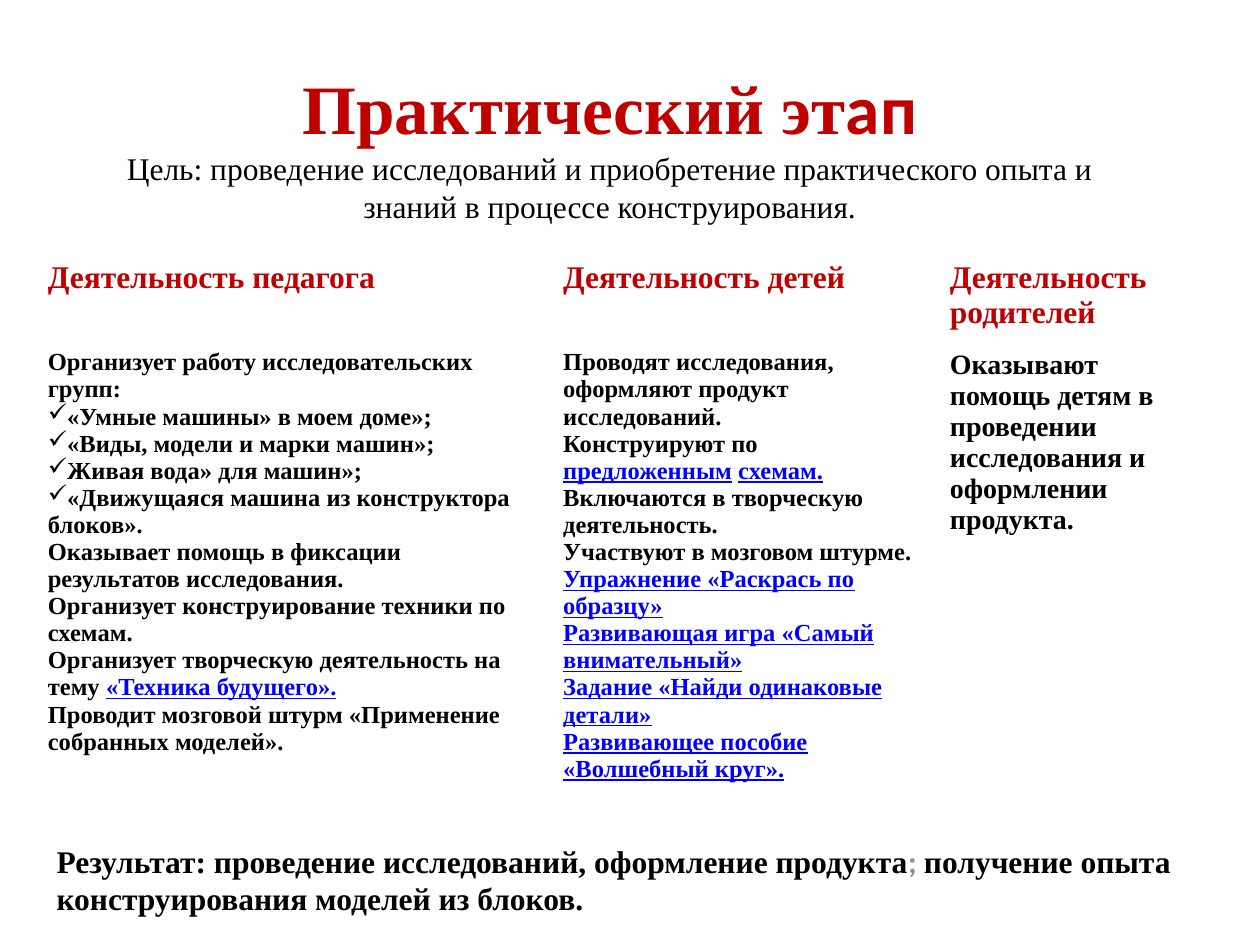
import dataclasses

import lxml.etree
import pptx
import pptx.dml.color
import pptx.enum.text
import pptx.oxml.ns
import pptx.util


@dataclasses.dataclass(frozen=True)
class Theme:
    serif: str = "Times New Roman"
    sans: str = "Calibri"
    accent: str = "C00000"
    ink: str = "000000"
    link: str = "0000FF"
    muted: str = "8C8C8C"
    border: str = "FFFFFF"
    title: float = 39.6
    lead: float = 18
    parents: float = 16
    body: float = 14


THEME = Theme()
WIDTH, HEIGHT = 10, 7.5
CHECK = "✓"
COLUMNS = (4.09, 3.07, 2.13)
ROWS = (0.68, 3.73)
HEADINGS = ("Деятельность педагога", "Деятельность детей", "Деятельность родителей")

GROUPS = (
    "«Умные машины» в моем доме»;",
    "«Виды, модели и марки машин»;",
    "Живая вода» для машин»;",
    "«Движущаяся машина из конструктора блоков».",
)
EXERCISES = (
    "Упражнение «Раскрась по образцу»",
    "Развивающая игра «Самый внимательный»",
    "Задание «Найди одинаковые детали»",
    "Развивающее пособие «Волшебный круг».",
)


def plain(text):
    return [(text, False)]


def linked(text):
    return [(text, True)]


TEACHER = [
    ("", plain("Организует работу исследовательских групп:")),
    *[(CHECK, plain(group)) for group in GROUPS],
    ("", plain("Оказывает помощь в фиксации результатов исследования.")),
    ("", plain("Организует конструирование техники по схемам.")),
    ("", plain("Организует творческую деятельность на тему ") + linked("«Техника будущего».")),
    ("", plain("Проводит мозговой штурм «Применение собранных моделей».")),
]
CHILDREN = [
    ("", plain("Проводят исследования, оформляют продукт исследований.")),
    ("", plain("Конструируют по ") + linked("предложенным") + plain(" ") + linked("схемам.")),
    ("", plain("Включаются в творческую деятельность.")),
    ("", plain("Участвуют в мозговом штурме.")),
    *[("", linked(exercise)) for exercise in EXERCISES],
]
PARENTS = [("", plain("Оказывают помощь детям в проведении исследования и оформлении продукта."))]


def add_span(para, text, size, color=THEME.ink, bold=True, face=THEME.serif, underline=False):
    span = para.add_run()
    span.text = text
    span.font.name = face
    span.font.size = pptx.util.Pt(size)
    span.font.bold = bold
    span.font.underline = underline
    span.font.color.rgb = pptx.dml.color.RGBColor.from_string(color)


def add_text_box(page, box):
    frame = page.shapes.add_textbox(*map(pptx.util.Inches, box)).text_frame
    frame.word_wrap = True
    return frame


def add_heading(page, box):
    frame = add_text_box(page, box)
    frame.vertical_anchor = pptx.enum.text.MSO_ANCHOR.MIDDLE
    para = frame.paragraphs[0]
    para.alignment = pptx.enum.text.PP_ALIGN.CENTER
    add_span(para, "Практический эт", THEME.title, THEME.accent)
    add_span(para, "ап", THEME.title, THEME.accent, face=THEME.sans)
    para.add_line_break()
    add_span(
        para,
        "Цель: проведение исследований и приобретение практического опыта "
        "и знаний в процессе конструирования.",
        THEME.lead,
        bold=False,
    )


def add_result(page, box):
    para = add_text_box(page, box).paragraphs[0]
    add_span(para, "Результат: проведение исследований, оформление продукта", THEME.lead)
    add_span(para, "; ", THEME.lead, THEME.muted, face=THEME.sans)
    add_span(para, "получение опыта конструирования моделей из блоков.", THEME.lead)


def add_element(parent, tag, **attributes):
    return lxml.etree.SubElement(parent, pptx.oxml.ns.qn(tag), **attributes)


def set_borders(cell, bottom):
    properties = cell._tc.get_or_add_tcPr()
    for side, points in (("L", 1), ("R", 1), ("T", 1), ("B", bottom)):
        line = add_element(properties, f"a:ln{side}", w=str(pptx.util.Pt(points)))
        fill = add_element(line, "a:solidFill")
        add_element(fill, "a:srgbClr", val=THEME.border)
    cell.fill.background()


def fill_cell(cell, entries, size):
    frame = cell.text_frame
    for index, (bullet, spans) in enumerate(entries):
        para = frame.add_paragraph() if index else frame.paragraphs[0]
        if bullet:
            add_element(para._p.get_or_add_pPr(), "a:buChar", char=bullet)
        for text, is_link in spans:
            color = THEME.link if is_link else THEME.ink
            add_span(para, text, size, color, underline=is_link)


def add_activities(page, box):
    left, top, width, height = box
    shape = page.shapes.add_table(
        len(ROWS), len(COLUMNS), *map(pptx.util.Inches, (left, top, width, height))
    )
    table = shape.table
    table.first_row = table.horz_banding = False
    for column, share in zip(table.columns, COLUMNS):
        column.width = pptx.util.Inches(width * share / sum(COLUMNS))
    for row, share in zip(table.rows, ROWS):
        row.height = pptx.util.Inches(height * share / sum(ROWS))
    contents = ((TEACHER, THEME.body), (CHILDREN, THEME.body), (PARENTS, THEME.parents))
    for index, (heading, (entries, size)) in enumerate(zip(HEADINGS, contents)):
        header, body = table.cell(0, index), table.cell(1, index)
        add_span(header.text_frame.paragraphs[0], heading, THEME.lead, THEME.accent)
        fill_cell(body, entries, size)
        set_borders(header, 3)
        set_borders(body, 1)


def main():
    deck = pptx.Presentation()
    deck.slide_width = pptx.util.Inches(WIDTH)
    deck.slide_height = pptx.util.Inches(HEIGHT)
    page = deck.slides.add_slide(deck.slide_layouts[6])
    add_heading(page, (0.59, 0.44, 8.5, 1.42))
    add_result(page, (0.35, 6.63, 9.21, 0.87))
    add_activities(page, (0.28, 2.02, sum(COLUMNS), sum(ROWS)))
    deck.save("out.pptx")


if __name__ == "__main__":
    main()
